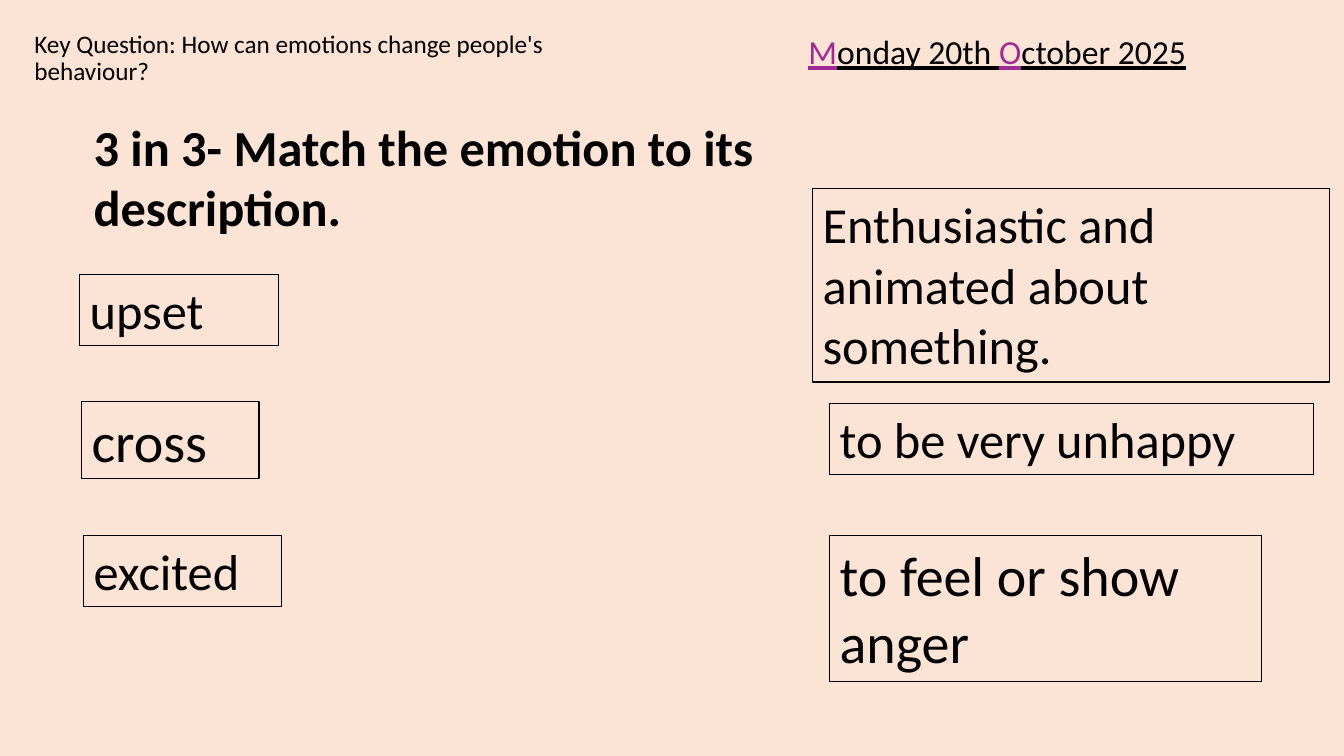
from pptx import Presentation
from pptx.dml.color import RGBColor
from pptx.enum.shapes import MSO_SHAPE
from pptx.enum.text import MSO_ANCHOR, MSO_AUTO_SIZE, PP_ALIGN
from pptx.util import Emu, Pt

RECTANGLE = MSO_SHAPE.RECTANGLE
TOP = MSO_ANCHOR.TOP
LEFT = PP_ALIGN.LEFT
NO_AUTOSIZE = MSO_AUTO_SIZE.NONE
GROW = MSO_AUTO_SIZE.SHAPE_TO_FIT_TEXT

PEACH = RGBColor(0xFB, 0xE3, 0xD6)
BLACK = RGBColor(0x00, 0x00, 0x00)
PURPLE = RGBColor(0xA0, 0x2B, 0x93)
FONT = "Calibri"
TITLE_ONLY = 5

# Text, size in points, box in px
EMOTIONS = [
    ("upset", 36, (79, 272, 197, 71)),
    ("cross", 40, (81, 398, 176, 77)),
    ("excited", 36, (83, 531, 196, 71)),
]
DESCRIPTIONS = [
    ("Enthusiastic and animated about something.", 36, (806, 187, 513, 192)),
    ("to be very unhappy", 36, (823, 400, 480, 71)),
    ("to feel or show anger", 40, (823, 531, 428, 145)),
]
DATE_PARTS = [("M", PURPLE), ("onday 20th ", BLACK),
              ("O", PURPLE), ("ctober 2025", BLACK)]


def px(length):
    return Emu(length * 9144)  # 100 px to the inch


def place(box):
    return [px(length) for length in box]


def style_run(run, size, color=BLACK, bold=False, underline=False):
    font = run.font
    font.name, font.size, font.color.rgb = FONT, Pt(size), color
    font.bold, font.underline = bold, underline


def fit_frame(frame, auto_size):
    frame.word_wrap = True
    frame.auto_size = auto_size
    frame.vertical_anchor = TOP
    frame.paragraphs[0].alignment = LEFT
    return frame.paragraphs[0]


def add_key_question(slide, box):
    question = slide.shapes.title
    question.left, question.top, question.width, question.height = place(box)
    frame = question.text_frame
    frame.text = "Key Question: How can emotions change people's behaviour?"
    frame.margin_left = frame.margin_right = px(10)
    frame.margin_top = frame.margin_bottom = px(10)
    line = fit_frame(frame, NO_AUTOSIZE)
    line.line_spacing = 0.9
    line.space_before = Pt(0)
    style_run(line.runs[0], 18)


def add_date(slide, box):
    line = fit_frame(slide.shapes.add_textbox(*place(box)).text_frame, GROW)
    for part, color in DATE_PARTS:
        run = line.add_run()
        run.text = part
        style_run(run, 24, color, underline=True)


def add_task(slide, box):
    line = fit_frame(slide.shapes.add_textbox(*place(box)).text_frame, GROW)
    line.text = "3 in 3- Match the emotion to its description."
    style_run(line.runs[0], 36, bold=True)


def add_card(slide, text, size, box):
    card = slide.shapes.add_shape(RECTANGLE, *place(box))
    card.shadow.inherit = False
    card.fill.background()
    card.line.color.rgb = BLACK
    card.line.width = Pt(0.75)
    line = fit_frame(card.text_frame, GROW)
    line.text = text
    style_run(line.runs[0], size)


def main():
    deck = Presentation()
    deck.slide_width, deck.slide_height = px(1333), px(750)
    slide = deck.slides.add_slide(deck.slide_layouts[TITLE_ONLY])
    slide.background.fill.solid()
    slide.background.fill.fore_color.rgb = PEACH

    # Heading row and task
    add_key_question(slide, (24, 21, 619, 84))
    add_date(slide, (792, 26, 500, 50))
    add_task(slide, (83, 110, 817, 131))

    # Emotions on the left, descriptions on the right
    for text, size, box in EMOTIONS + DESCRIPTIONS:
        add_card(slide, text, size, box)

    deck.save("out.pptx")


if __name__ == "__main__":
    main()
